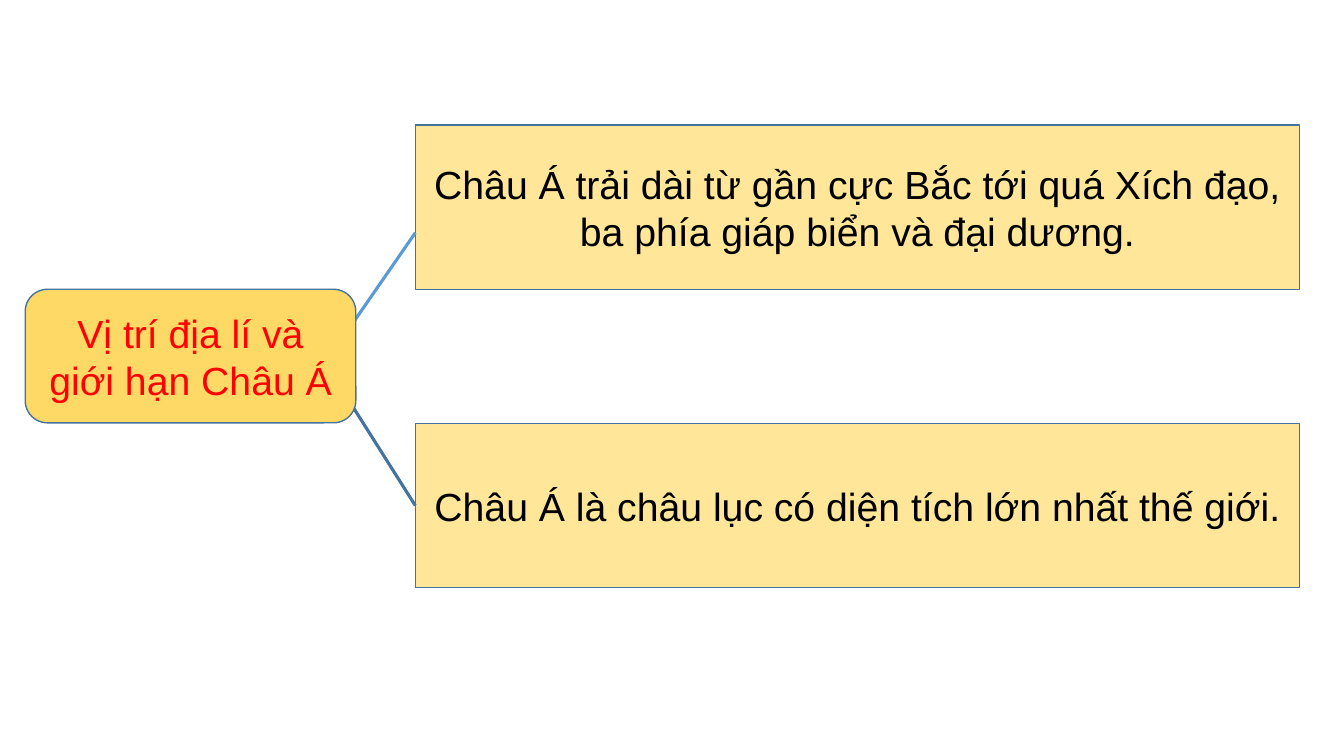
from dataclasses import dataclass

from lxml import etree
from pptx import Presentation
from pptx.dml.color import RGBColor
from pptx.enum import shapes, text
from pptx.oxml.ns import qn
from pptx.shapes.autoshape import Shape
from pptx.shapes.connector import Connector
from pptx.util import Pt

BLUE = "43739E"
FACT_X, FACT_W, FACT_H = 296.64, 631.44, 117.36


@dataclass
class Box:
    words: str
    left: float
    top: float
    width: float
    height: float
    fill: str
    ink: str
    kind: shapes.MSO_SHAPE = shapes.MSO_SHAPE.RECTANGLE


@dataclass
class Link:
    start: tuple[float, float]
    end: tuple[float, float]
    tint: str


def fact(words: str, top: float) -> Box:
    return Box(words, FACT_X, top, FACT_W, FACT_H, "FFE699", "000000")


NORTH = fact("Châu Á trải dài từ gần cực Bắc tới quá Xích đạo, "
             "ba phía giáp biển và đại dương.", 89.28)
AREA = fact("Châu Á là châu lục có diện tích lớn nhất thế giới.", 302.4)
TOPIC = Box("Vị trí địa lí và giới hạn Châu Á", 18, 206.64, 236.16, 95.4,
            "FFD966", "FF0000", shapes.MSO_SHAPE.ROUNDED_RECTANGLE)
NORTH_LINK = Link((249.84, 234), (FACT_X, 166.32), "5B9BD5")
AREA_LINK = Link((235.44, 264.24), (FACT_X, AREA.top + FACT_H / 2), BLUE)


def paint(part, tint: str) -> None:
    """Give a fill or a font a solid colour."""
    if hasattr(part, "solid"):
        part.solid()
        part = part.fore_color
    else:
        part = part.color
    part.rgb = RGBColor.from_string(tint)


def draw_box(slide, box: Box) -> Shape:
    shape = slide.shapes.add_shape(box.kind, Pt(box.left), Pt(box.top),
                                   Pt(box.width), Pt(box.height))
    shape.shadow.inherit = False
    paint(shape.fill, box.fill)
    paint(shape.line.fill, BLUE)
    shape.line.width = Pt(1)
    frame = shape.text_frame
    frame.word_wrap = True
    frame.vertical_anchor = text.MSO_ANCHOR.MIDDLE
    frame.text = box.words
    para = frame.paragraphs[0]
    para.alignment = text.PP_ALIGN.CENTER
    para.font.name = "Arial"
    para.font.size = Pt(28)
    paint(para.font, box.ink)
    return shape


def draw_link(slide, link: Link) -> Connector:
    ends = [Pt(n) for n in link.start + link.end]
    line = slide.shapes.add_connector(shapes.MSO_CONNECTOR.STRAIGHT, *ends)
    paint(line.line.fill, link.tint)
    line.line.width = Pt(2.25)
    etree.SubElement(line._element.spPr, qn("a:effectLst"))
    return line


def main() -> None:
    deck = Presentation()
    deck.slide_width, deck.slide_height = Pt(960), Pt(540)
    slide = deck.slides.add_slide(deck.slide_layouts[6])
    draw_box(slide, NORTH)
    area = draw_box(slide, AREA)
    draw_link(slide, NORTH_LINK)
    draw_link(slide, AREA_LINK).end_connect(area, 1)
    draw_box(slide, TOPIC)
    deck.save("out.pptx")


if __name__ == "__main__":
    main()
